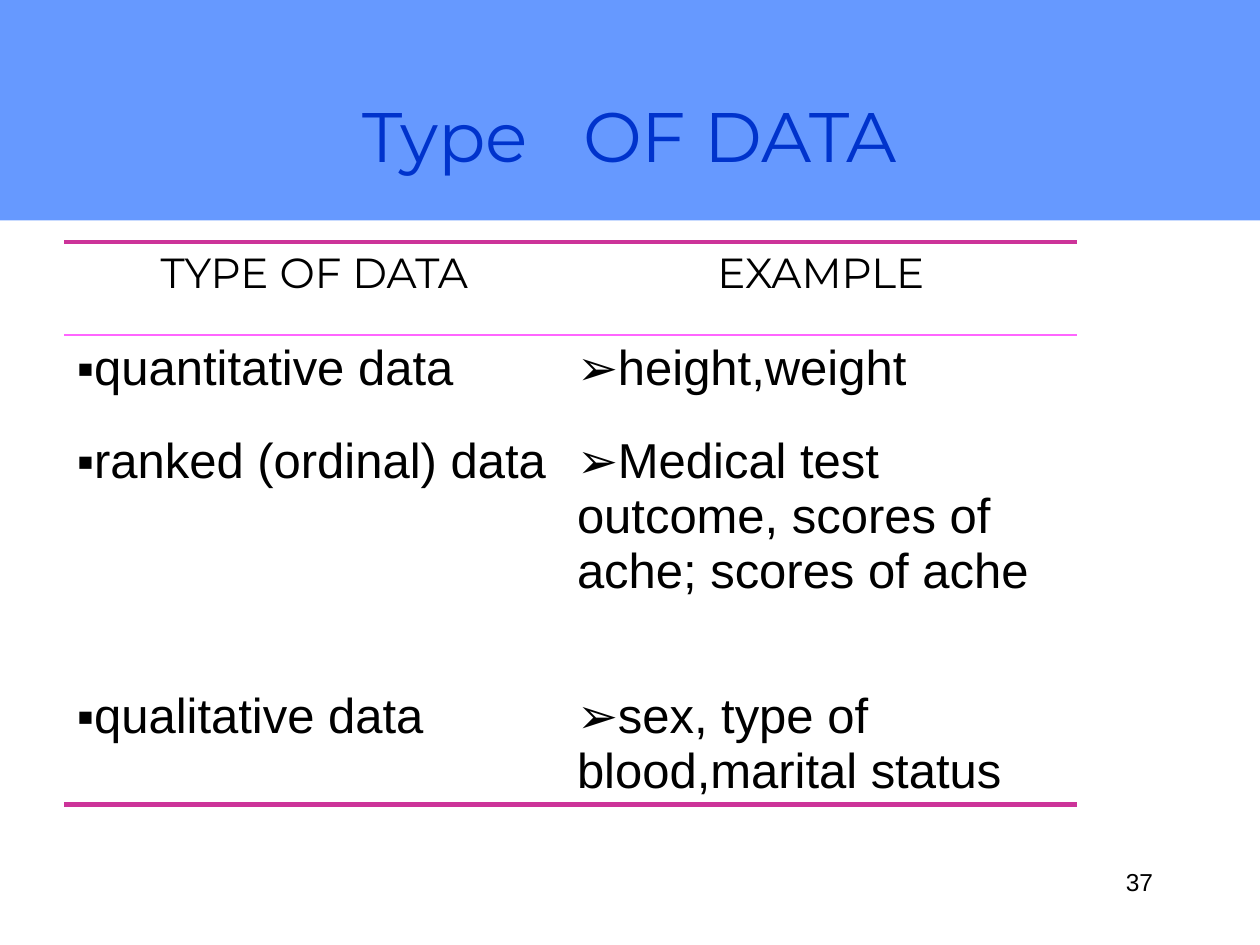
from dataclasses import dataclass

from lxml.etree import SubElement
from pptx import Presentation
from pptx.dml.color import RGBColor
from pptx.enum.shapes import MSO_SHAPE
from pptx.enum.text import MSO_ANCHOR, PP_ALIGN
from pptx.oxml.ns import qn
from pptx.util import Inches, Pt

COLORS = {
    "band": "6699FF",
    "title": "0033CC",
    "text": "000000",
    "outer_rule": "CC3399",
    "header_rule": "FF66FF",
}
COLUMN_WIDTHS = (3.97, 4.07)
ROW_HEIGHTS = (0.74, 0.74, 2.02, 0.96)
COLUMN_BULLETS = ("▪", "➢")


@dataclass(frozen=True)
class Rule:
    color: str
    width: float


@dataclass(frozen=True)
class DataType:
    name: str
    example: str


OUTER_RULE = Rule("outer_rule", 3)
HEADER_RULE = Rule("header_rule", 1)
HEADER = DataType("TYPE OF DATA", "EXAMPLE")
DATA_TYPES = (
    DataType("quantitative data", "height,weight"),
    DataType("ranked (ordinal) data", "Medical test outcome, scores of ache; scores of ache"),
    DataType("qualitative data", "sex, type of blood,marital status"),
)


def format_paragraph(paragraph, font_name: str, size: float, color: str, alignment) -> None:
    paragraph.alignment = alignment
    for run in paragraph.runs:
        run.font.name = font_name
        run.font.size = Pt(size)
        run.font.color.rgb = RGBColor.from_string(COLORS[color])


def add_bullet(paragraph, character: str) -> None:
    properties = paragraph._p.get_or_add_pPr()
    properties.set("marL", "0")
    properties.set("indent", "0")
    SubElement(properties, qn("a:buFont"), typeface="Arial")
    SubElement(properties, qn("a:buChar"), char=character)


def set_borders(cell, top: Rule | None, bottom: Rule | None) -> None:
    properties = cell._tc.get_or_add_tcPr()
    for side, rule in (("lnL", None), ("lnR", None), ("lnT", top), ("lnB", bottom)):
        line = SubElement(properties, qn(f"a:{side}"))
        if rule is None:
            SubElement(line, qn("a:noFill"))
            continue
        line.set("w", str(Pt(rule.width)))
        fill = SubElement(line, qn("a:solidFill"))
        SubElement(fill, qn("a:srgbClr"), val=COLORS[rule.color])


def add_title_band(slide) -> None:
    band = slide.shapes.add_shape(MSO_SHAPE.RECTANGLE, 0, 0, Inches(10), Inches(1.75))
    band.shadow.inherit = False
    band.fill.solid()
    band.fill.fore_color.rgb = RGBColor.from_string(COLORS["band"])
    band.line.fill.background()


def place_title(slide) -> None:
    """Put the title in front of the band, with a wide gap after its first word."""
    title = slide.shapes.title
    slide.shapes._spTree.append(title._element)
    title.left, title.top = Inches(0.75), Inches(0.44)
    title.width, title.height = Inches(8.5), Inches(1.25)
    title.text_frame.vertical_anchor = MSO_ANCHOR.MIDDLE
    paragraph = title.text_frame.paragraphs[0]
    for text in ("Type", " ", "OF DATA"):
        paragraph.add_run().text = text
    format_paragraph(paragraph, "Montserrat", 40, "title", PP_ALIGN.CENTER)
    paragraph.runs[1].font._element.set("spc", "2100")


def add_data_table(slide) -> None:
    rows = (HEADER, *DATA_TYPES)
    table = slide.shapes.add_table(
        len(rows), len(COLUMN_WIDTHS), Inches(0.51), Inches(1.92),
        Inches(sum(COLUMN_WIDTHS)), Inches(sum(ROW_HEIGHTS)),
    ).table
    table.first_row = table.horz_banding = False
    for column, width in zip(table.columns, COLUMN_WIDTHS):
        column.width = Inches(width)
    rules = (OUTER_RULE, HEADER_RULE, None, None, OUTER_RULE)
    for row_index, (row, height) in enumerate(zip(rows, ROW_HEIGHTS)):
        table.rows[row_index].height = Inches(height)
        for column_index, text in enumerate((row.name, row.example)):
            cell = table.cell(row_index, column_index)
            cell.text_frame.text = text
            paragraph = cell.text_frame.paragraphs[0]
            if row is HEADER:
                format_paragraph(paragraph, "Montserrat", 24, "text", PP_ALIGN.CENTER)
            else:
                format_paragraph(paragraph, "Arial", 28, "text", PP_ALIGN.LEFT)
                add_bullet(paragraph, COLUMN_BULLETS[column_index])
            set_borders(cell, rules[row_index], rules[row_index + 1])
            cell.fill.background()


def add_page_number(slide) -> None:
    box = slide.shapes.add_textbox(Inches(7.17), Inches(6.83), Inches(2.08), Inches(0.5))
    box.text_frame.word_wrap = True
    box.text_frame.text = "37"
    format_paragraph(box.text_frame.paragraphs[0], "Arial", 14, "text", PP_ALIGN.RIGHT)


def main() -> None:
    presentation = Presentation()
    presentation.slide_width, presentation.slide_height = Inches(10), Inches(7.5)
    slide = presentation.slides.add_slide(presentation.slide_layouts[5])
    add_page_number(slide)
    add_title_band(slide)
    place_title(slide)
    add_data_table(slide)
    presentation.save("out.pptx")


if __name__ == "__main__":
    main()
